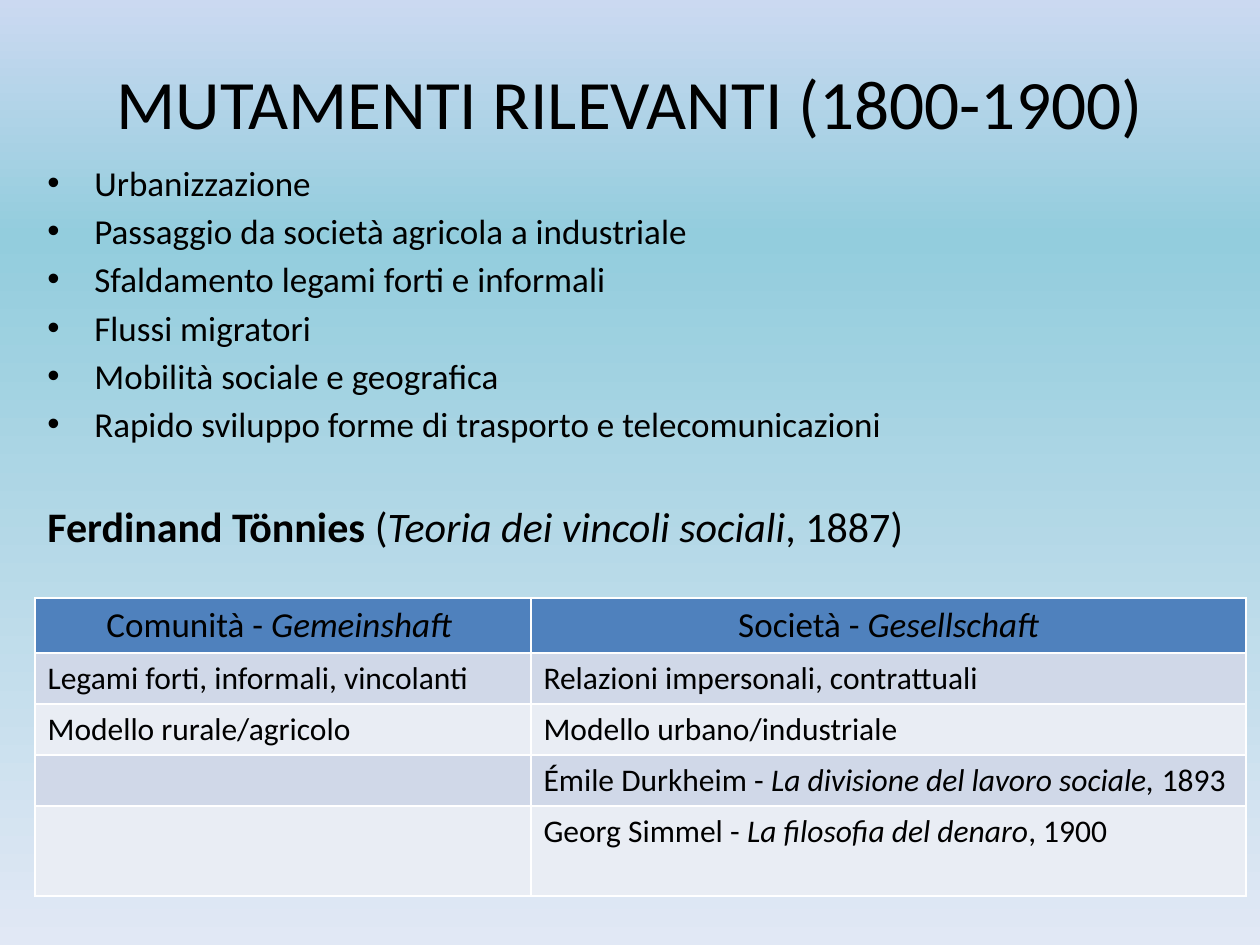
from copy import deepcopy
from typing import NamedTuple

from lxml.etree import SubElement
from pptx import Presentation
from pptx.dml.color import RGBColor
from pptx.enum.text import MSO_ANCHOR as Anchor, PP_ALIGN as Align
from pptx.oxml import parse_xml
from pptx.oxml.ns import nsdecls, qn
from pptx.util import Emu, Pt

FONT = "Calibri"
BLACK = "000000"
WHITE = "FFFFFF"
HEADER_FILL = "4F81BD"
BAND_FILLS = ("D0D8E8", "E9EDF4")
BACKGROUND_STOPS = ((0, "CBD9F1"), (0.25, "93CDDD"), (1, "E1E8F5"))


class Span(NamedTuple):
    text: str
    bold: bool = False
    italic: bool = False


class Box(NamedTuple):
    left: int
    top: int
    width: int
    height: int


class Line(NamedTuple):
    spans: tuple
    size: float
    align: Align = Align.LEFT
    space_before: float = 0
    bullet: bool = False


CHANGES = (
    "Urbanizzazione",
    "Passaggio da società agricola a industriale",
    "Sfaldamento legami forti e informali",
    "Flussi migratori",
    "Mobilità sociale e geografica",
    "Rapido sviluppo forme di trasporto e telecomunicazioni",
)
TONNIES = (
    Span("Ferdinand Tönnies ", bold=True),
    Span("("),
    Span("Teoria dei vincoli sociali", italic=True),
    Span(", 1887)"),
)
TABLE_ROWS = (
    ((Span("Comunità - "), Span("Gemeinshaft ", italic=True)),
     (Span("Società - "), Span("Gesellschaft", italic=True))),
    ((Span("Legami forti, informali, vincolanti"),),
     (Span("Relazioni impersonali, contrattuali"),)),
    ((Span("Modello rurale/agricolo"),),
     (Span("Modello urbano/industriale"),)),
    ((),
     (Span("Émile Durkheim - "),
      Span("La divisione del lavoro sociale, ", italic=True),
      Span("1893"))),
    ((),
     (Span("Georg Simmel - "),
      Span("La filosofia del denaro", italic=True),
      Span(", 1900"))),
)
COLUMN_WIDTHS = (496, 715)
ROW_HEIGHTS = (55, 51, 51, 51, 90)


def px(value: int) -> Emu:
    return Emu(round(value * 914400 / 126))


def color(value: str) -> RGBColor:
    return RGBColor.from_string(value)


def add_bullet(paragraph) -> None:
    properties = paragraph._p.get_or_add_pPr()
    properties.set("marL", str(px(47)))
    properties.set("indent", str(px(-47)))
    SubElement(properties, qn("a:buFont")).set("typeface", "Arial")
    SubElement(properties, qn("a:buChar")).set("char", "•")


def write_line(paragraph, line: Line) -> None:
    if line.bullet:
        add_bullet(paragraph)
    paragraph.alignment = line.align
    if line.space_before:
        paragraph.space_before = Pt(line.space_before)
    for span in line.spans:
        run = paragraph.add_run()
        run.text = span.text
        run.font.name = FONT
        run.font.size = Pt(line.size)
        run.font.bold = span.bold
        run.font.italic = span.italic
        run.font.color.rgb = color(BLACK)


def add_text(slide, box: Box, lines: list, anchor: Anchor = Anchor.TOP) -> None:
    frame = slide.shapes.add_textbox(*map(px, box)).text_frame
    frame.word_wrap = True
    frame.vertical_anchor = anchor
    for index, line in enumerate(lines):
        paragraph = frame.add_paragraph() if index else frame.paragraphs[0]
        write_line(paragraph, line)


def set_background(slide) -> None:
    fill = slide.background.fill
    fill.gradient()
    fill.gradient_angle = 270
    stop_list = next(slide.element.iter(qn("a:gsLst")))
    stop_list.append(deepcopy(stop_list[-1]))
    for stop, (position, value) in zip(fill.gradient_stops, BACKGROUND_STOPS):
        stop.position = position
        stop.color.rgb = color(value)


def style_cell(cell, fill: str) -> None:
    cell.fill.solid()
    cell.fill.fore_color.rgb = color(fill)
    properties = cell._tc.get_or_add_tcPr()
    for index, side in enumerate("LRTB"):
        properties.insert(index, parse_xml(
            f'<a:ln{side} {nsdecls("a")} w="{Pt(1)}"><a:solidFill>'
            f'<a:srgbClr val="{WHITE}"/></a:solidFill></a:ln{side}>'))


def add_comparison(slide, left: int, top: int) -> None:
    box = Box(left, top, sum(COLUMN_WIDTHS), sum(ROW_HEIGHTS))
    table = slide.shapes.add_table(
        len(ROW_HEIGHTS), len(COLUMN_WIDTHS), *map(px, box)).table
    table.first_row = False
    table.horz_banding = False
    for column, width in zip(table.columns, COLUMN_WIDTHS):
        column.width = px(width)
    for index, (row, height) in enumerate(zip(table.rows, ROW_HEIGHTS)):
        row.height = px(height)
        header = index == 0
        fill = HEADER_FILL if header else BAND_FILLS[(index - 1) % 2]
        size, align = (20, Align.CENTER) if header else (18, Align.LEFT)
        for cell, spans in zip(row.cells, TABLE_ROWS[index]):
            style_cell(cell, fill)
            write_line(cell.text_frame.paragraphs[0], Line(spans, size, align))


def main() -> None:
    presentation = Presentation()
    presentation.slide_width = px(1260)
    presentation.slide_height = px(945)
    slide = presentation.slides.add_slide(presentation.slide_layouts[6])
    set_background(slide)

    title = Line((Span("MUTAMENTI RILEVANTI (1800-1900)"),), 39.6, Align.CENTER)
    add_text(slide, Box(63, 38, 1134, 127), [title], Anchor.MIDDLE)

    body = [
        Line((Span(change),), 20, space_before=3.6 if index else 0, bullet=True)
        for index, change in enumerate(CHANGES)
    ]
    body.append(Line(TONNIES, 24, space_before=32))
    add_text(slide, Box(35, 155, 1221, 759), body)

    add_comparison(slide, 35, 598)
    presentation.save("out.pptx")


if __name__ == "__main__":
    main()
